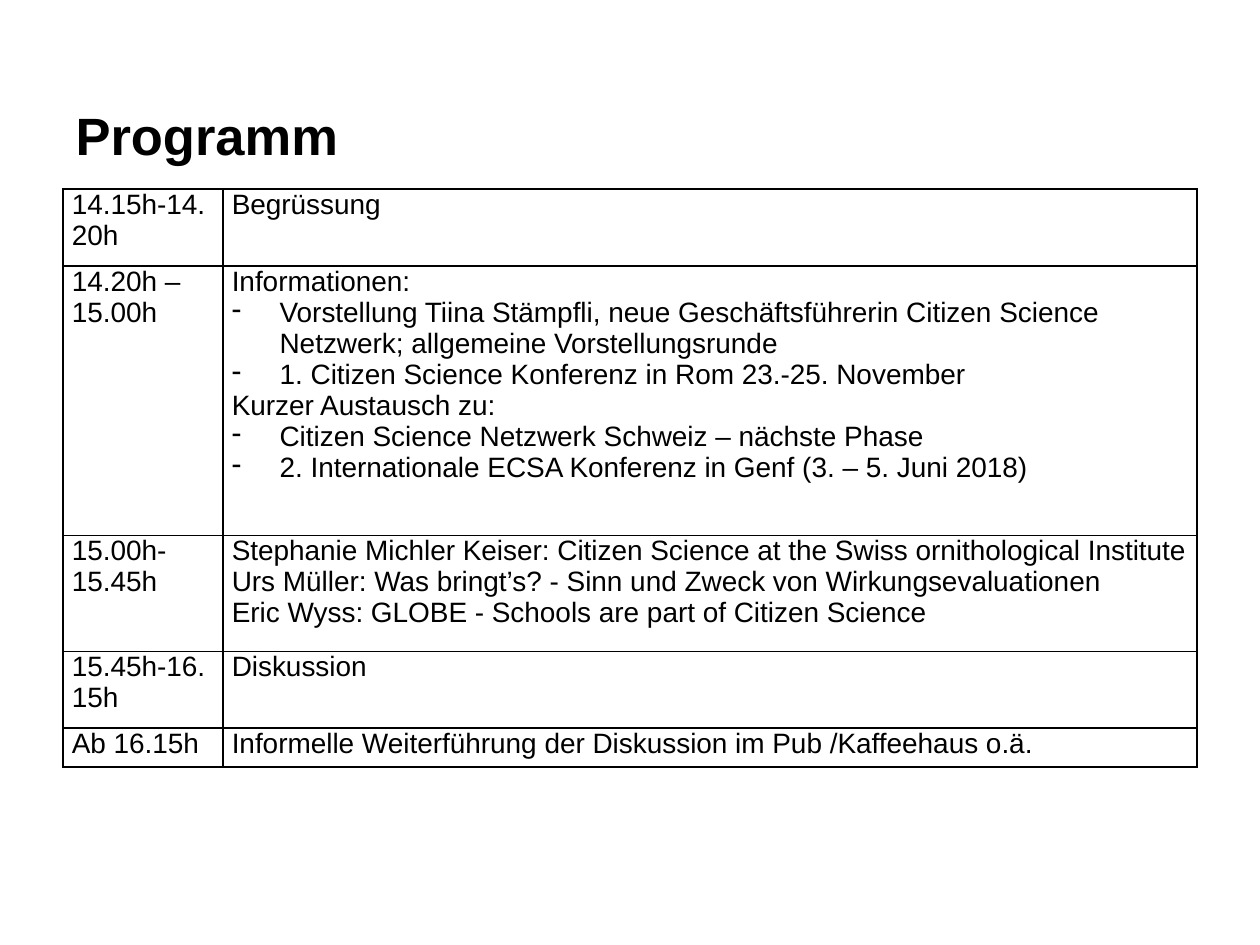
from dataclasses import dataclass

from lxml import etree
from pptx import Presentation
from pptx import util as u
from pptx.dml.color import RGBColor
from pptx.enum import text
from pptx.oxml import ns

BLACK = RGBColor(0, 0, 0)
FONT = "Arial"
BULLET = "- "
INDENT = u.Inches(0.38)
COLUMN_WIDTHS = (1.27, 7.73)


@dataclass
class Session:
    time: str
    lines: list[str]  # lines that start with BULLET become list items
    height: float


SESSIONS = [
    Session("14.15h-14.20h", ["Begrüssung"], 0.61),
    Session("14.20h – 15.00h", [
        "Informationen:",
        "- Vorstellung Tiina Stämpfli, neue Geschäftsführerin Citizen Science "
        "Netzwerk; allgemeine Vorstellungsrunde",
        "- 1. Citizen Science Konferenz in Rom 23.-25. November",
        "Kurzer Austausch zu:",
        "- Citizen Science Netzwerk Schweiz – nächste Phase",
        "- 2. Internationale ECSA Konferenz in Genf (3. – 5. Juni 2018)",
    ], 2.14),
    Session("15.00h- 15.45h", [
        "Stephanie Michler Keiser: Citizen Science at the Swiss ornithological Institute",
        "Urs Müller: Was bringt’s? - Sinn und Zweck von Wirkungsevaluationen",
        "Eric Wyss: GLOBE - Schools are part of Citizen Science",
    ], 0.92),
    Session("15.45h-16.15h", ["Diskussion"], 0.61),
    Session("Ab 16.15h",
            ["Informelle Weiterführung der Diskussion im Pub /Kaffeehaus o.ä."], 0.31),
]


def format_runs(paragraph, size: float, bold: bool = False) -> None:
    for run in paragraph.runs:
        run.font.name = FONT
        run.font.size = u.Pt(size)
        run.font.bold = bold
        run.font.color.rgb = BLACK


def add_dash(paragraph) -> None:
    properties = paragraph._p.get_or_add_pPr()
    properties.set("marL", str(INDENT))
    properties.set("indent", str(-INDENT))
    etree.SubElement(properties, ns.qn("a:buChar"), char="-")


def add_borders(cell) -> None:
    properties = cell._tc.get_or_add_tcPr()
    for side in ("lnL", "lnR", "lnT", "lnB"):
        line = etree.SubElement(properties, ns.qn(f"a:{side}"), w=str(u.Pt(1)))
        fill = etree.SubElement(line, ns.qn("a:solidFill"))
        etree.SubElement(fill, ns.qn("a:srgbClr"), val=str(BLACK))


def fill_cell(cell, lines: list[str]) -> None:
    cell.margin_left = cell.margin_right = u.Inches(0.07)
    cell.margin_top = cell.margin_bottom = 0
    add_borders(cell)
    cell.fill.background()
    frame = cell.text_frame
    frame.text = "\n".join(line.removeprefix(BULLET) for line in lines)
    for paragraph, line in zip(frame.paragraphs, lines):
        if line.startswith(BULLET):
            add_dash(paragraph)
        format_runs(paragraph, 16)


def add_title(slide, words: str) -> None:
    title = slide.shapes.title
    title.left, title.top = u.Inches(0.5), u.Inches(0.44)
    title.width, title.height = u.Inches(9), u.Inches(1.25)
    title.text_frame.text = words
    title.text_frame.vertical_anchor = text.MSO_ANCHOR.MIDDLE
    paragraph = title.text_frame.paragraphs[0]
    paragraph.alignment = text.PP_ALIGN.LEFT
    format_runs(paragraph, 30, bold=True)


def add_programme(slide, sessions: list[Session]) -> None:
    height = sum(session.height for session in sessions)
    table = slide.shapes.add_table(
        len(sessions), len(COLUMN_WIDTHS), u.Inches(0.5), u.Inches(1.5),
        u.Inches(sum(COLUMN_WIDTHS)), u.Inches(height)).table
    table.first_row = table.horz_banding = False
    for column, width in zip(table.columns, COLUMN_WIDTHS):
        column.width = u.Inches(width)
    for row, session in zip(table.rows, sessions):
        row.height = u.Inches(session.height)
        fill_cell(row.cells[0], [session.time])
        fill_cell(row.cells[1], session.lines)


def main() -> None:
    presentation = Presentation()
    presentation.slide_width, presentation.slide_height = u.Inches(10), u.Inches(7.5)
    slide = presentation.slides.add_slide(presentation.slide_layouts[5])  # title only
    add_title(slide, "Programm")
    add_programme(slide, SESSIONS)
    presentation.save("out.pptx")


if __name__ == "__main__":
    main()
